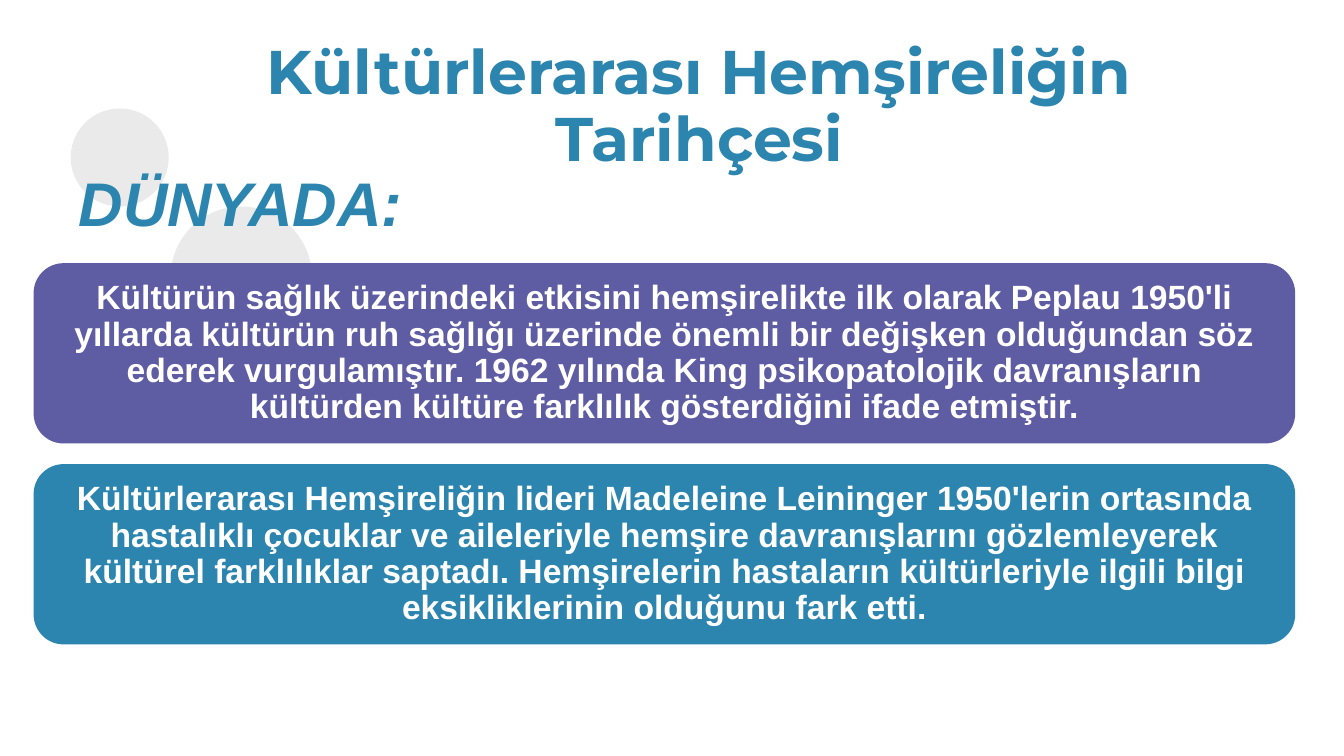
from pptx import Presentation
from pptx.dml.color import RGBColor
from pptx.enum import shapes, text
from pptx.util import Pt

BLUE = RGBColor(0x2C, 0x85, 0xAE)
PURPLE = RGBColor(0x5E, 0x5C, 0xA2)
GREY = RGBColor(0xEA, 0xEA, 0xEA)
WHITE = RGBColor(0xFF, 0xFF, 0xFF)

CARD_LEFT, CARD_TOP = 24, 188
CARD_WIDTH, CARD_HEIGHT, CARD_STEP = 901.2, 128.8, 143.5
CARDS = [
    (PURPLE, "Kültürün sağlık üzerindeki etkisini hemşirelikte ilk olarak Peplau "
             "1950'li yıllarda kültürün ruh sağlığı üzerinde önemli bir değişken "
             "olduğundan söz ederek vurgulamıştır. 1962 yılında King psikopatolojik "
             "davranışların kültürden kültüre farklılık gösterdiğini ifade etmiştir."),
    (BLUE, "Kültürlerarası Hemşireliğin lideri Madeleine Leininger 1950'lerin "
           "ortasında hastalıklı çocuklar ve aileleriyle hemşire davranışlarını "
           "gözlemleyerek kültürel farklılıklar saptadı. Hemşirelerin hastaların "
           "kültürleriyle ilgili bilgi eksikliklerinin olduğunu fark etti."),
]


def add_filled_shape(slide, kind, left, top, width, height, color):
    shape = slide.shapes.add_shape(kind, Pt(left), Pt(top), Pt(width), Pt(height))
    shape.shadow.inherit = False
    shape.fill.solid()
    shape.fill.fore_color.rgb = color
    shape.line.fill.background()
    return shape


def write_text(shape, words, size, font, color, align, spacing=1.0, italic=False):
    """Fill the shape with one bold paragraph, wrapped and vertically centred."""
    frame = shape.text_frame
    frame.word_wrap = True
    frame.vertical_anchor = text.MSO_ANCHOR.MIDDLE
    paragraph = frame.paragraphs[0]
    paragraph.alignment = align
    paragraph.line_spacing = spacing
    run = paragraph.add_run()
    run.text = words
    run.font.size = Pt(size)
    run.font.name = font
    run.font.bold = True
    run.font.italic = italic
    run.font.color.rgb = color


def add_circle(slide, left, top, diameter):
    add_filled_shape(slide, shapes.MSO_SHAPE.OVAL, left, top, diameter, diameter, GREY)


def add_heading(slide, words, left, top, width, height, **style):
    box = slide.shapes.add_textbox(Pt(left), Pt(top), Pt(width), Pt(height))
    write_text(box, words, 44, color=BLUE, **style)


def add_card(slide, top, color, words):
    card = add_filled_shape(slide, shapes.MSO_SHAPE.ROUNDED_RECTANGLE,
                            CARD_LEFT, top, CARD_WIDTH, CARD_HEIGHT, color)
    frame = card.text_frame
    frame.margin_left = frame.margin_right = Pt(7.2)
    frame.margin_top = frame.margin_bottom = Pt(7.2)
    write_text(card, words, 24, "Arial", WHITE, text.PP_ALIGN.CENTER, spacing=0.9)


def main():
    presentation = Presentation()
    presentation.slide_width, presentation.slide_height = Pt(960), Pt(540)
    slide = presentation.slides.add_slide(presentation.slide_layouts[6])

    add_circle(slide, 121.8, 147.5, 101)
    add_circle(slide, 50.5, 77.5, 70)
    add_heading(slide, "Kültürlerarası Hemşireliğin Tarihçesi", 85.5, 25, 828, 104.5,
                font="Montserrat", align=text.PP_ALIGN.CENTER, spacing=0.9)
    for index, (color, words) in enumerate(CARDS):
        add_card(slide, CARD_TOP + index * CARD_STEP, color, words)
    add_heading(slide, "DÜNYADA:", 49, 114, 425.5, 60.5,
                font="Arial", align=text.PP_ALIGN.LEFT, italic=True)

    presentation.save("out.pptx")


if __name__ == "__main__":
    main()
